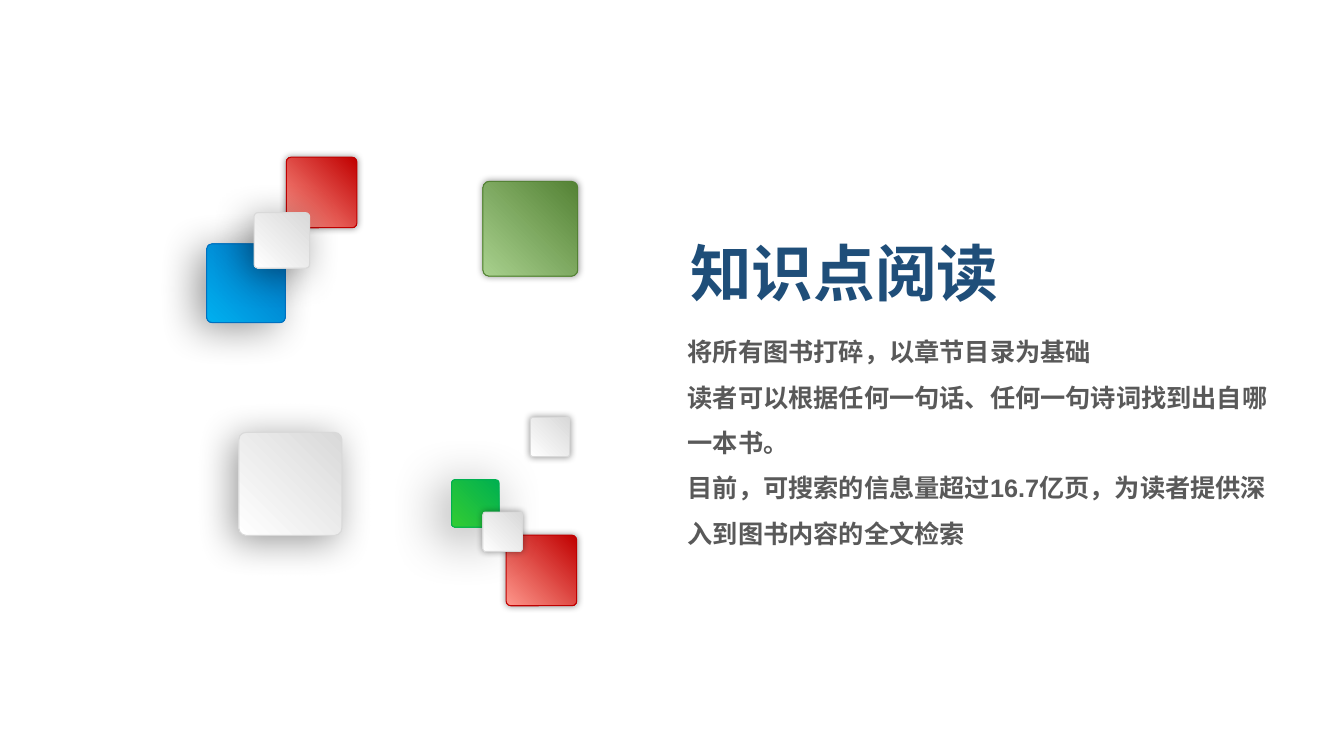
from dataclasses import dataclass

from lxml import etree
from pptx import Presentation
from pptx.dml.color import RGBColor
from pptx.enum.shapes import MSO_SHAPE
from pptx.enum.text import MSO_ANCHOR, MSO_AUTO_SIZE, PP_ALIGN
from pptx.oxml.ns import qn
from pptx.util import Inches, Pt

ROUNDED = MSO_SHAPE.ROUNDED_RECTANGLE
CENTER, LEFT = PP_ALIGN.CENTER, PP_ALIGN.LEFT
TOP = MSO_ANCHOR.TOP
GROW = MSO_AUTO_SIZE.SHAPE_TO_FIT_TEXT

CELL = Inches(0.1)
CJK = "Noto Sans CJK SC"
COLORS = {
    "title": "1F4E79",
    "body": "595959",
    "shadow": "000000",
    "red": "C00000",
    "red_light": "FE978C",
    "olive": "548235",
    "olive_light": "A9D18E",
    "blue": "0070C0",
    "blue_light": "00B0F0",
    "green": "00B050",
    "green_light": "33CC33",
    "grey": "D9D9D9",
    "grey_light": "FFFFFF",
}


@dataclass(frozen=True)
class Shadow:
    blur: int
    distance: int
    angle: int


@dataclass(frozen=True)
class Tile:
    col: float
    row: float
    side: float
    color: str
    shadow: Shadow


GLOW = Shadow(5, 0, 0)
SOFT = Shadow(27, 6, 135)

TILES = [
    Tile(50.2, 53.1, 7.0, "red", GLOW),
    Tile(47.9, 18.0, 9.4, "olive", GLOW),
    Tile(20.5, 24.2, 7.8, "blue", Shadow(29, 8, 150)),
    Tile(28.4, 15.6, 7.0, "red", GLOW),
    Tile(25.2, 21.1, 5.5, "grey", SOFT),
    Tile(52.6, 41.4, 3.9, "grey", GLOW),
    Tile(44.8, 47.6, 4.7, "green", Shadow(40, 9, 135)),
    Tile(23.7, 42.9, 10.2, "grey", SOFT),
    Tile(47.9, 50.8, 3.9, "grey", GLOW),
]

BODY = [
    [("将所有图书打碎，以章节目录为基础", "Arial")],
    [("读者可以根据", "Arial"),
     ("任何一句话、任何一句诗词找到出自哪一本书。", "Calibri")],
    [("目前，可搜索的信息量超过16.7亿页，为读者提供深入到图书内容的全文检索", "Arial")],
]


def rgb(name: str) -> RGBColor:
    return RGBColor.from_string(COLORS[name])


def cells(count: float) -> int:
    return round(count * CELL)


def place(sp, col: float, row: float, width: float, height: float) -> None:
    sp.left, sp.top = cells(col), cells(row)
    sp.width, sp.height = cells(width), cells(height)


def format_run(r, font: str, size: int, color: str) -> None:
    r.font.name = font
    r.font.size = Pt(size)
    r.font.bold = True
    r.font.color.rgb = rgb(color)
    latin = r.font._element.find(qn("a:latin"))
    ea = etree.Element(qn("a:ea"), typeface=CJK)
    latin.addnext(ea)


def add_shadow(sp, shadow: Shadow) -> None:
    sp.shadow.inherit = False
    effects = sp._element.spPr.find(qn("a:effectLst"))
    outer = etree.SubElement(
        effects, qn("a:outerShdw"), blurRad=str(Pt(shadow.blur)),
        dist=str(Pt(shadow.distance)), dir=str(shadow.angle * 60000),
        algn="ctr", rotWithShape="0")
    color = etree.SubElement(outer, qn("a:srgbClr"), val=COLORS["shadow"])
    etree.SubElement(color, qn("a:alpha"), val="40000")


def add_tile(slide, tile: Tile) -> None:
    sp = slide.shapes.add_shape(
        ROUNDED, cells(tile.col), cells(tile.row),
        cells(tile.side), cells(tile.side))
    sp.adjustments[0] = 0.067
    sp.fill.gradient()
    sp.fill.gradient_angle = 225
    names = (tile.color, f"{tile.color}_light")
    for position, (stop, name) in enumerate(zip(sp.fill.gradient_stops, names)):
        stop.position = position
        stop.color.rgb = rgb(name)
    sp.line.color.rgb = rgb(tile.color)
    sp.line.width = Pt(0.75)
    add_shadow(sp, tile.shadow)


def fill_title(sp) -> None:
    place(sp, 66.2, 22.8, 35.1, 8.4)
    tf = sp.text_frame
    tf.text = "知识点阅读"
    tf.word_wrap = True
    tf.auto_size = GROW
    tf.vertical_anchor = TOP
    p = tf.paragraphs[0]
    p.alignment = CENTER
    format_run(p.runs[0], CJK, 44, "title")


def fill_body(sp) -> None:
    place(sp, 67.2, 31.4, 61, 23.7)
    tf = sp.text_frame
    tf.word_wrap = True
    tf.auto_size = GROW
    tf.vertical_anchor = TOP
    for index, pieces in enumerate(BODY):
        p = tf.add_paragraph() if index else tf.paragraphs[0]
        p.alignment = LEFT
        p.line_spacing = 1.5
        p.space_before = Pt(0)
        pPr = p._p.get_or_add_pPr()
        pPr.set("marL", "0")
        pPr.set("indent", "0")
        etree.SubElement(pPr, qn("a:buNone"))
        for text, font in pieces:
            r = p.add_run()
            r.text = text
            format_run(r, font, 18, "body")


def main() -> None:
    prs = Presentation()
    prs.slide_width, prs.slide_height = Inches(13.33), Inches(7.5)
    slide = prs.slides.add_slide(prs.slide_layouts[1])
    fill_title(slide.shapes.title)
    fill_body(slide.placeholders[1])
    for tile in TILES:
        add_tile(slide, tile)
    prs.save("out.pptx")


if __name__ == "__main__":
    main()
